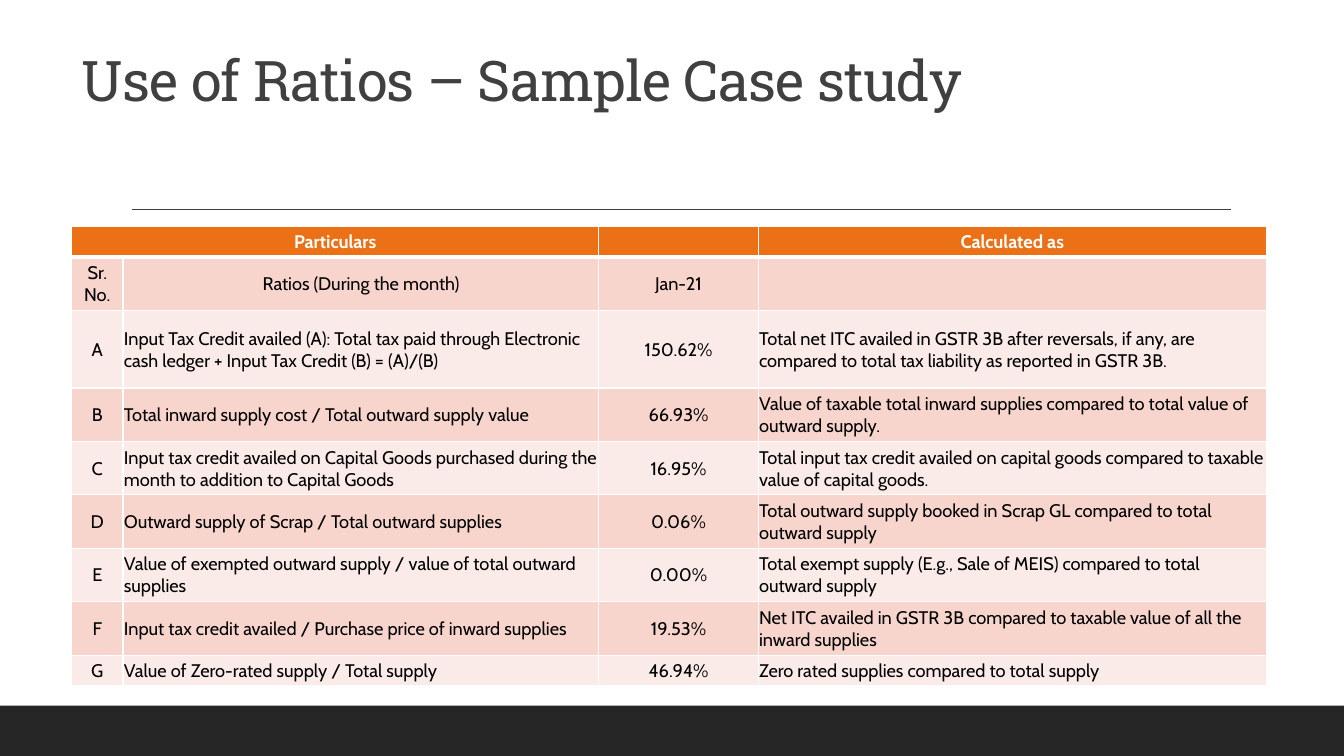
from typing import NamedTuple

from lxml.etree import SubElement
from pptx import Presentation
from pptx.dml.color import RGBColor
from pptx.enum.shapes import MSO_CONNECTOR as Link, MSO_SHAPE as Shape
from pptx.enum.text import MSO_ANCHOR as Anchor, PP_ALIGN as Align
from pptx.oxml.ns import qn
from pptx.util import Inches, Pt

WIDE, HIGH = 13.33, 7.5
SIZE = 13
COLS = [0.51, 4.72, 1.58, 5.04]
ROWS = [0.3, 0.53, 0.77] + [0.53] * 5 + [0.3]
HEAD, DARK, PALE = "EC7016", "F8D5CC", "FBEBE8"


class Row(NamedTuple):
    mark: str
    ratio: str
    value: str
    basis: str


DATA = [
    Row("Particulars", "", "", "Calculated as"),
    Row("Sr. No.", "Ratios (During the month)", "Jan-21", ""),
    Row("A", "Input Tax Credit availed (A): Total tax paid through Electronic "
        "cash ledger + Input Tax Credit (B) = (A)/(B)", "150.62%",
        "Total net ITC availed in GSTR 3B after reversals, if any, are "
        "compared to total tax liability as reported in GSTR 3B."),
    Row("B", "Total inward supply cost / Total outward supply value", "66.93%",
        "Value of taxable total inward supplies compared to total value of "
        "outward supply."),
    Row("C", "Input tax credit availed on Capital Goods purchased during the "
        "month to addition to Capital Goods", "16.95%",
        "Total input tax credit availed on capital goods compared to taxable "
        "value of capital goods."),
    Row("D", "Outward supply of Scrap / Total outward supplies", "0.06%",
        "Total outward supply booked in Scrap GL compared to total outward supply"),
    Row("E", "Value of exempted outward supply / value of total outward supplies",
        "0.00%",
        "Total exempt supply (E.g., Sale of MEIS) compared to total outward supply"),
    Row("F", "Input tax credit availed / Purchase price of inward supplies",
        "19.53%",
        "Net ITC availed in GSTR 3B compared to taxable value of all the "
        "inward supplies"),
    Row("G", "Value of Zero-rated supply / Total supply", "46.94%",
        "Zero rated supplies compared to total supply"),
]


def color(code: str) -> RGBColor:
    return RGBColor.from_string(code)


def add_run(para, text: str, face: str, size: float, code: str, bold: bool = False):
    run = para.add_run()
    run.text = text
    font = run.font
    font.name, font.size, font.bold = face, Pt(size), bold
    font.color.rgb = color(code)
    return run


def add_title(slide) -> None:
    title = slide.shapes.title
    title.left, title.top = Inches(0.71), Inches(0.31)
    title.width, title.height = Inches(11.49), Inches(0.87)
    frame = title.text_frame
    frame.word_wrap = True
    frame.vertical_anchor = Anchor.BOTTOM
    para = frame.paragraphs[0]
    para.alignment = Align.LEFT
    para.line_spacing = 0.9
    run = add_run(para, "Use of Ratios – Sample Case study", "Roboto Slab", 40, "404040")
    run.font._element.set("spc", "-50")


def add_rule(slide) -> None:
    rule = slide.shapes.add_connector(
        Link.STRAIGHT, Inches(1.31), Inches(2.08), Inches(12.21), Inches(2.08))
    rule.line.color.rgb = color("404040")
    rule.line.width = Pt(1)
    SubElement(rule._element.spPr, qn("a:effectLst"))


def add_band(slide) -> None:
    band = slide.shapes.add_shape(
        Shape.RECTANGLE, Inches(0), Inches(7), Inches(WIDE), Inches(0.5))
    band.shadow.inherit = False
    band.fill.solid()
    band.fill.fore_color.rgb = color("262626")
    band.line.fill.background()


def set_edges(cell, base: float) -> None:
    """Draw white borders, with the bottom one base points wide."""
    props = cell._tc.get_or_add_tcPr()
    for spot, (side, width) in enumerate(
            [("L", 1), ("R", 1), ("T", 1), ("B", base)]):
        edge = SubElement(props, qn(f"a:ln{side}"), w=str(Pt(width)))
        fill = SubElement(edge, qn("a:solidFill"))
        SubElement(fill, qn("a:srgbClr"), val="FFFFFF")
        props.insert(spot, edge)


def fill_cell(cell, text: str, row: int, col: int) -> None:
    head = row == 0
    cell.fill.solid()
    cell.fill.fore_color.rgb = color(HEAD if head else DARK if row % 2 else PALE)
    set_edges(cell, 3 if head else 1)
    cell.vertical_anchor = Anchor.MIDDLE
    cell.margin_left = cell.margin_right = cell.margin_top = Inches(0.01)
    cell.margin_bottom = 0
    para = cell.text_frame.paragraphs[0]
    center = row < 2 or col in (0, 2)
    para.alignment = Align.CENTER if center else Align.LEFT
    if text:
        add_run(para, text, "Cabin", SIZE, "FFFFFF" if head else "000000", head)
    else:
        SubElement(para._p, qn("a:endParaRPr"), sz=str(SIZE * 100))


def add_grid(slide) -> None:
    table = slide.shapes.add_table(
        len(ROWS), len(COLS), Inches(0.71), Inches(2.25),
        Inches(sum(COLS)), Inches(sum(ROWS))).table
    table.first_row = table.horz_banding = False
    for col, width in zip(table.columns, COLS):
        col.width = Inches(width)
    for row, height in zip(table.rows, ROWS):
        row.height = Inches(height)
    for row, data in enumerate(DATA):
        for col, text in enumerate(data):
            fill_cell(table.cell(row, col), text, row, col)
    table.cell(0, 0).merge(table.cell(0, 1))


def main() -> None:
    deck = Presentation()
    deck.slide_width, deck.slide_height = Inches(WIDE), Inches(HIGH)
    slide = deck.slides.add_slide(deck.slide_layouts[5])
    slide.background.fill.solid()
    slide.background.fill.fore_color.rgb = color("FFFFFF")
    add_title(slide)
    add_rule(slide)
    add_band(slide)
    add_grid(slide)
    deck.save("out.pptx")


if __name__ == "__main__":
    main()
